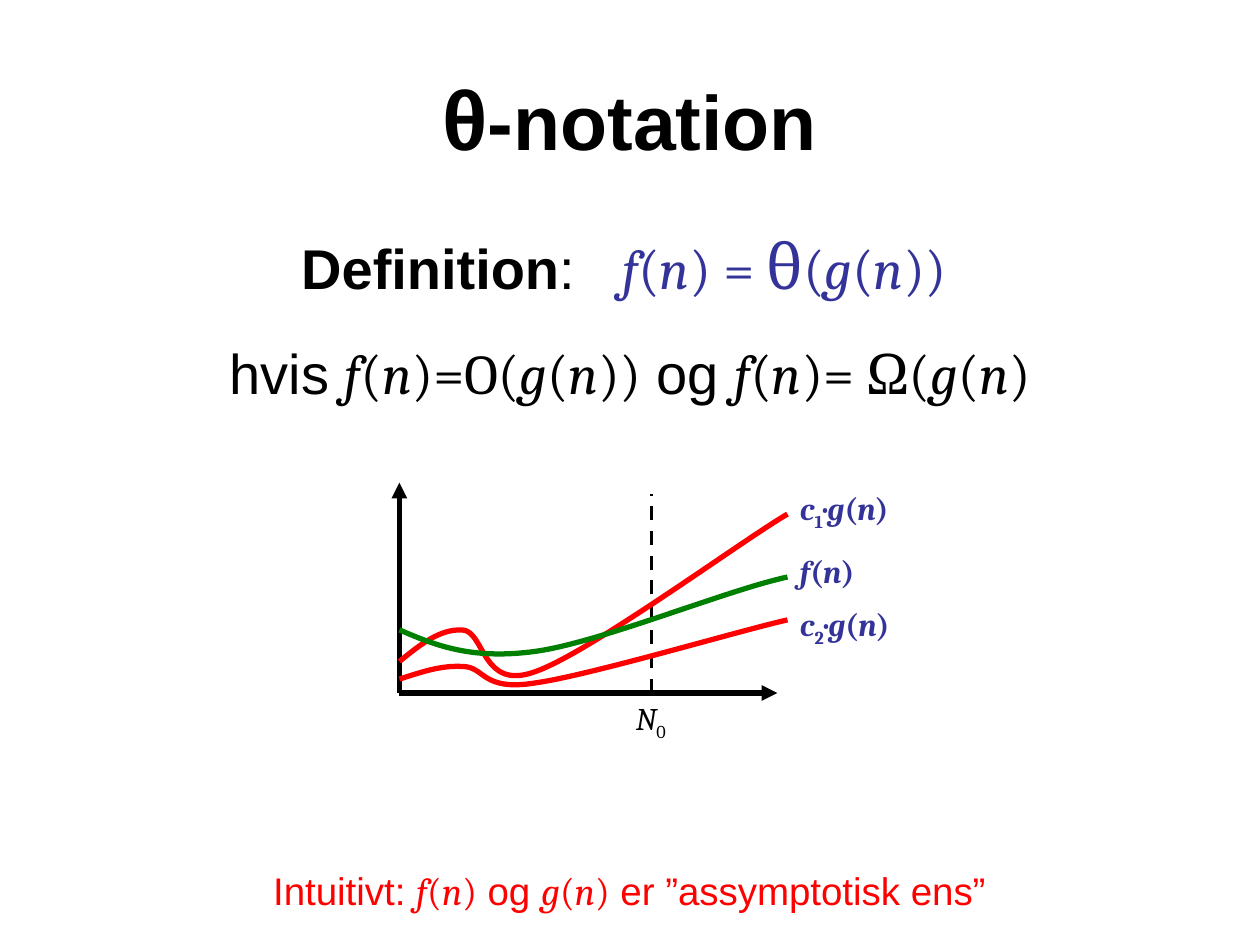
from itertools import groupby

from pptx import Presentation
from pptx.dml.color import RGBColor
from pptx.enum.dml import MSO_LINE_DASH_STYLE as DASH
from pptx.enum.shapes import MSO_CONNECTOR as CONNECTOR
from pptx.enum.text import MSO_ANCHOR as ANCHOR, PP_ALIGN as ALIGN
from pptx.oxml.ns import qn
from pptx.util import Inches, Pt
from lxml.etree import SubElement

BLACK, BLUE, RED, GREEN = "000000", "333399", "FF0000", "008000"
VARIABLES = "fgncN"


def add_text(paragraph, text, size=32, color=BLACK, bold=False, math=False, spacing=0):
    pieces = [("", text)]
    if math:
        kinds = groupby(text, lambda c: "variable" if c in VARIABLES
                        else "subscript" if c.isdigit() else "")
        pieces = [(kind, "".join(chars)) for kind, chars in kinds]
    for kind, piece in pieces:
        run = paragraph.add_run()
        run.text = piece
        run.font.name = "Cambria" if math else "Arial"
        run.font.size = Pt(size)
        run.font.bold = bold
        run.font.italic = kind == "variable"
        run.font.color.rgb = RGBColor.from_string(color)
        properties = run._r.get_or_add_rPr()
        if kind == "subscript":
            properties.set("baseline", "-25000")
        if spacing:
            properties.set("spc", str(spacing * 100))


def add_label(left, top, width, height, align):
    frame = slide.shapes.add_textbox(
        Inches(left), Inches(top), Inches(width), Inches(height)).text_frame
    frame.word_wrap = True
    frame.paragraphs[0].alignment = align
    return frame.paragraphs[0]


prs = Presentation()
prs.slide_width, prs.slide_height = Inches(10), Inches(7.5)
slide = prs.slides.add_slide(prs.slide_layouts[1])

title, body = slide.placeholders
for holder, top, height in [(title, 0.3, 1.25), (body, 1.75, 3.67)]:
    holder.left, holder.top = Inches(0.5), Inches(top)
    holder.width, holder.height = Inches(9), Inches(height)

title.text_frame.vertical_anchor = ANCHOR.MIDDLE
heading = title.text_frame.paragraphs[0]
heading.alignment = ALIGN.CENTER
add_text(heading, "θ", size=48, bold=True)
add_text(heading, "-notation", size=44, bold=True)

definition = body.text_frame.paragraphs[0]
condition = body.text_frame.add_paragraph()
for paragraph in (definition, condition):
    paragraph.alignment = ALIGN.CENTER
    SubElement(paragraph._p.get_or_add_pPr(), qn("a:buNone"))
condition.space_before = Pt(20.5)

add_text(definition, "Definition", bold=True)
add_text(definition, ": ", spacing=9)
add_text(definition, "f(n) = ", color=BLUE, math=True)
add_text(definition, "θ", size=36, color=BLUE, math=True)
add_text(definition, "(g(n)) ", color=BLUE, math=True)

add_text(condition, "hvis ")
add_text(condition, "f(n)=O(g(n))", math=True)
add_text(condition, " og ")
add_text(condition, "f(n)= Ω(g(n)", math=True)

intuition = add_label(0.12, 6.83, 9.75, 0.47, ALIGN.CENTER)
for text, math in [("Intuitivt: ", False), ("f(n)", True), (" og ", False),
                   ("g(n)", True), (" er ”assymptotisk ens”", False)]:
    add_text(intuition, text, size=22, color=RED, math=math)

axis_x, axis_y = 3.17, 5.5
for start_x, end_x, end_y, weight, dashed in [
    (axis_x, axis_x, 3.83, 3, False),
    (axis_x, 6.17, axis_y, 3, False),
    (5.17, 5.17, 3.92, 2, True),
]:
    line = slide.shapes.add_connector(
        CONNECTOR.STRAIGHT, Inches(start_x), Inches(axis_y), Inches(end_x), Inches(end_y))
    line.line.width = Pt(weight)
    line.line.color.rgb = RGBColor.from_string(BLACK)
    if dashed:
        line.line.dash_style = DASH.DASH
    else:
        SubElement(line.line._get_or_add_ln(), qn("a:tailEnd"), type="triangle")
    SubElement(line._element.spPr, qn("a:effectLst"))

upper_bound = [(3.17, 5.25), (3.33, 5.12), (3.49, 4.99), (3.67, 5), (3.85, 5.01),
               (3.82, 5.49), (4.25, 5.33), (4.68, 5.18), (5.89, 4.29), (6.25, 4.08)]
function = [(3.17, 5), (3.45, 5.12), (3.74, 5.24), (4.25, 5.17),
            (4.76, 5.1), (5.78, 4.68), (6.25, 4.58)]
lower_bound = [(3.17, 5.39), (3.33, 5.34), (3.49, 5.28), (3.67, 5.29), (3.85, 5.29),
               (3.82, 5.49), (4.25, 5.42), (4.68, 5.36), (5.89, 5), (6.25, 4.92)]
for controls, color in [(upper_bound, RED), (function, GREEN), (lower_bound, RED)]:
    start, *others = [(Inches(x), Inches(y)) for x, y in controls]
    builder = slide.shapes.build_freeform(*start)
    builder.add_line_segments(others, close=False)
    curve = builder.convert_to_shape()
    outline = next(curve._element.iter(qn("a:path")))
    for index, segment in enumerate(outline.findall(qn("a:lnTo"))):
        if index % 3 == 0:
            bezier = SubElement(outline, qn("a:cubicBezTo"))
        bezier.append(segment[0])
        outline.remove(segment)
    curve.shadow.inherit = False
    curve.fill.background()
    curve.line.width = Pt(3)
    curve.line.color.rgb = RGBColor.from_string(color)

for text, left, top, width, align, color, bold in [
    ("N0", 4.83, 5.5, 0.67, ALIGN.CENTER, BLACK, False),
    ("c1·g(n)", 6.25, 3.83, 1, ALIGN.LEFT, BLUE, True),
    ("f(n)", 6.25, 4.33, 0.67, ALIGN.LEFT, BLUE, True),
    ("c2·g(n)", 6.25, 4.75, 1, ALIGN.LEFT, BLUE, True),
]:
    label = add_label(left, top, width, 0.4, align)
    add_text(label, text, size=18, color=color, bold=bold, math=True)

prs.save("out.pptx")
